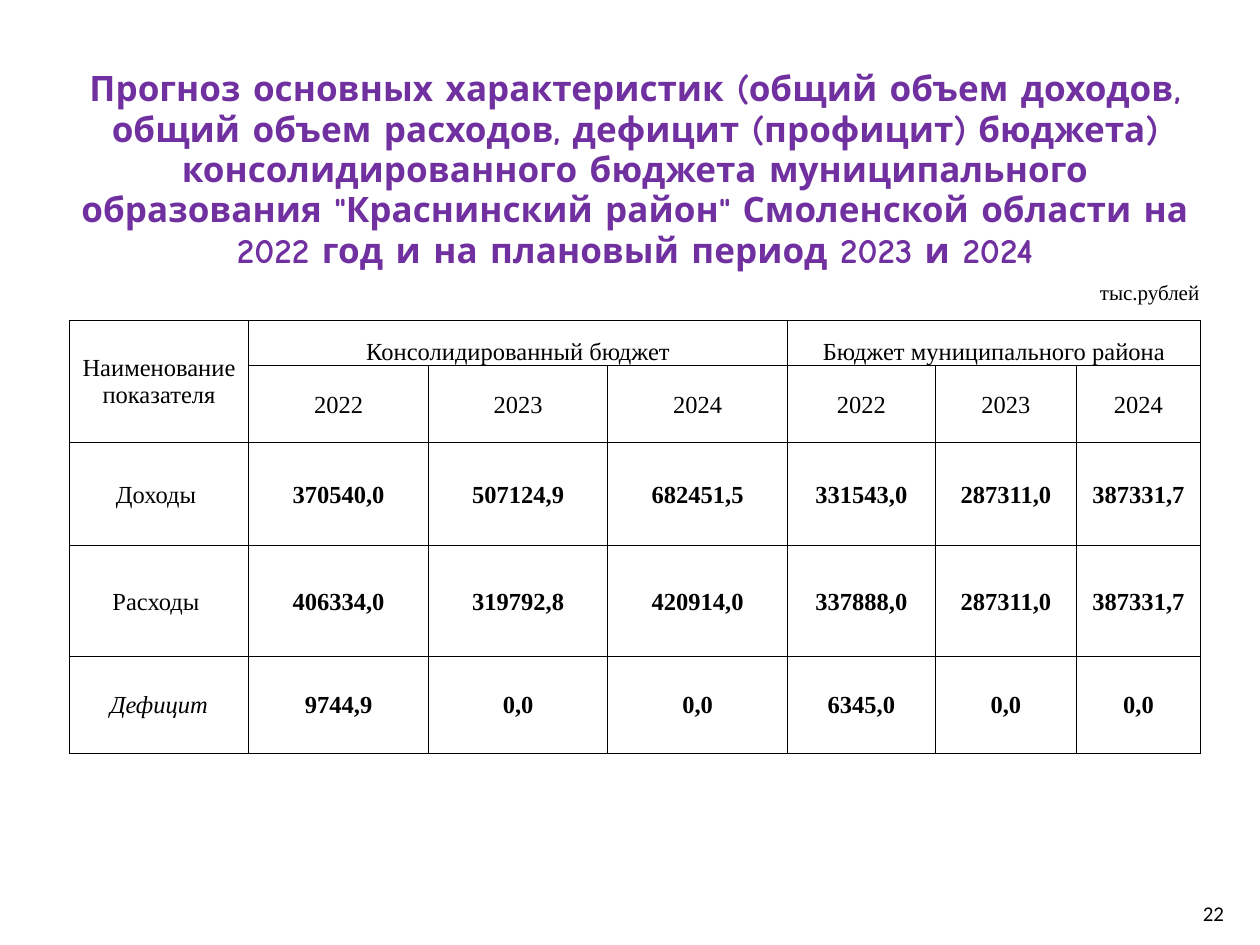
from lxml import etree
from pptx import Presentation
from pptx.dml.color import RGBColor
from pptx.enum import text
from pptx.oxml import ns
from pptx.util import Pt

SERIF = "Times New Roman"
TITLE = (
    "Прогноз основных характеристик (общий объем доходов, общий объем расходов, "
    "дефицит (профицит) бюджета) консолидированного бюджета муниципального образования "
    '"Краснинский район" Смоленской области на 2022 год и на плановый период 2023 и 2024'
)
YEARS = ["2022", "2023", "2024"]
ROWS = [
    [TITLE] + [""] * 6,
    [""] * 6 + ["тыс.рублей"],
    ["Наименование показателя", "Консолидированный бюджет", "", "",
     "Бюджет муниципального района", "", ""],
    [""] + YEARS * 2,
    ["Доходы ", "370540,0", "507124,9", "682451,5", "331543,0", "287311,0", "387331,7"],
    ["Расходы ", "406334,0", "319792,8", "420914,0", "337888,0", "287311,0", "387331,7"],
    ["Дефицит", "9744,9", "0,0", "0,0", "6345,0", "0,0", "0,0"],
]
COL_WIDTHS = [102.6] * 4 + [84.6, 80.6, 70.9]
ROW_HEIGHTS = [121, 22.4, 26, 44, 58.9, 63.4, 55.4]
MERGES = [((0, 0), (0, 6)), ((2, 0), (3, 0)), ((2, 1), (2, 3)), ((2, 4), (2, 6))]
HEADER, YEAR, DATA = 2, 3, 4
HEAVY_ACROSS = {(YEAR, 2), (YEAR, 3), (DATA, 1), (DATA, 2), (DATA, 3)}
HEAVY_DOWN = {(YEAR, 2), (YEAR, 4)}
NO_STYLE = "{2D5ABB26-0587-4C30-8999-92F81FD0307C}"


def rgb(value):
    return RGBColor.from_string(value)


def write(tf, words, *, size=14, font=SERIF, color="000000", bold=False, italic=False,
          align=text.PP_ALIGN.CENTER):
    p = tf.paragraphs[0]
    p.alignment = align
    p.font.size = Pt(size)
    if words:
        r = p.add_run()
        r.text = words
        r.font.size, r.font.name = Pt(size), font
        r.font.bold, r.font.italic = bold, italic
        r.font.color.rgb = rgb(color)


def add_border(cell, index, side, width):
    ln = etree.Element(ns.qn(f"a:ln{side}"), w=str(Pt(width)))
    fill = etree.SubElement(ln, ns.qn("a:solidFill"))
    etree.SubElement(fill, ns.qn("a:srgbClr"), val="000000")
    cell._tc.get_or_add_tcPr().insert(index, ln)


def draw_borders(cell, row, col):
    if row < HEADER - 1:
        return
    if row == HEADER - 1:
        add_border(cell, 0, "B", 0.5)
        return
    heavy = {
        "L": (row, col) in HEAVY_DOWN,
        "R": (row, col + 1) in HEAVY_DOWN,
        "T": (row, col) in HEAVY_ACROSS,
        "B": (row + 1, col) in HEAVY_ACROSS,
    }
    for i, (side, thick) in enumerate(heavy.items()):
        add_border(cell, i, side, 1 if thick else 0.5)


def cell_format(row, col):
    if row == 0:
        return dict(size=20, font="Comic Neue", color="7030A0", bold=True)
    if row == 1:
        return dict(size=12, align=text.PP_ALIGN.RIGHT)
    return dict(bold=row >= DATA and col > 0, italic=row == len(ROWS) - 1 and col == 0)


def cell_anchor(row, col):
    if row < HEADER:
        return text.MSO_ANCHOR.TOP
    if row == HEADER and col > 0:
        return text.MSO_ANCHOR.BOTTOM
    return text.MSO_ANCHOR.MIDDLE


def add_budget_table(s):
    frame = s.shapes.add_table(len(ROWS), len(COL_WIDTHS), Pt(39.6), Pt(39.6),
                               Pt(sum(COL_WIDTHS)), Pt(sum(ROW_HEIGHTS)))
    table = frame.table
    table.first_row = table.horz_banding = False
    table._tbl.tblPr.find(ns.qn("a:tableStyleId")).text = NO_STYLE
    for column, width in zip(table.columns, COL_WIDTHS):
        column.width = Pt(width)
    for line, height in zip(table.rows, ROW_HEIGHTS):
        line.height = Pt(height)
    for first, last in MERGES:
        table.cell(*first).merge(table.cell(*last))
    for row, values in enumerate(ROWS):
        for col, words in enumerate(values):
            cell = table.cell(row, col)
            cell.margin_left = cell.margin_right = cell.margin_top = Pt(0.7)
            cell.margin_bottom = Pt(0)
            cell.vertical_anchor = cell_anchor(row, col)
            cell.fill.background()
            draw_borders(cell, row, col)
            write(cell.text_frame, words, **cell_format(row, col))


def add_page_number(s, number):
    sp = s.shapes.add_textbox(Pt(646.5), Pt(512), Pt(60), Pt(19.5))
    tf = sp.text_frame
    tf.word_wrap = True
    tf.vertical_anchor = text.MSO_ANCHOR.MIDDLE
    write(tf, number, size=12, font="Calibri", align=text.PP_ALIGN.RIGHT)


def main():
    prs = Presentation()
    prs.slide_width, prs.slide_height = Pt(720), Pt(540)
    s = prs.slides.add_slide(prs.slide_layouts[6])
    add_page_number(s, "22")
    add_budget_table(s)
    prs.save("out.pptx")


if __name__ == "__main__":
    main()
